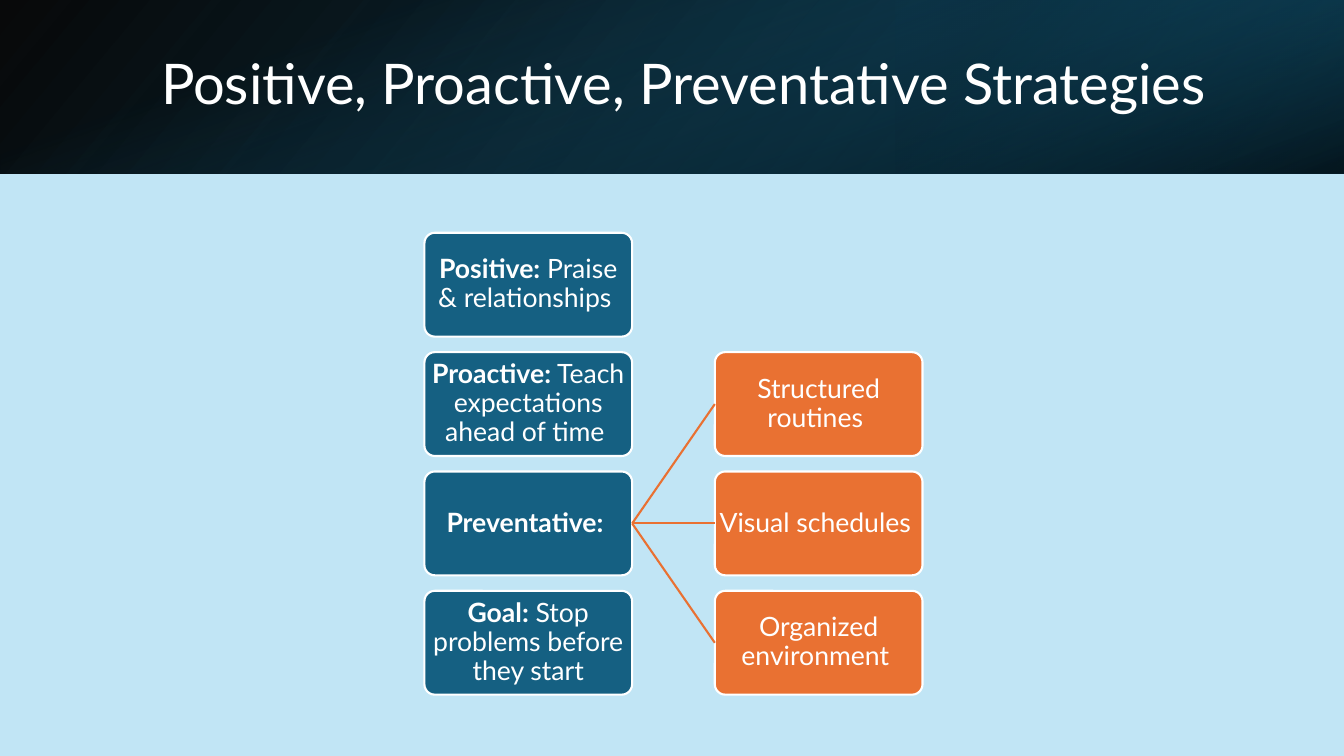
from lxml.etree import SubElement
from pptx import Presentation
from pptx.dml.color import RGBColor
from pptx.enum.shapes import MSO_CONNECTOR, MSO_SHAPE
from pptx.enum.text import MSO_ANCHOR, PP_ALIGN
from pptx.oxml import parse_xml
from pptx.oxml.ns import nsdecls, qn
from pptx.util import Inches, Pt

COLORS = {
    "sky": "C1E5F5", "white": "FFFFFF", "black": "000000", "blue": "156082",
    "deep": "104862", "night": "0B3041", "orange": "E97132",
}
WIDTH, HEIGHT = 13.33, 7.5
BAND = 1.72


class StrategySlide:
    grid_left, grid_top = 4.21, 2.31
    column_step, row_step = 2.88, 1.184
    box_width, box_height = 2.06, 1.03

    def __init__(self, deck):
        self.slide = deck.slides.add_slide(deck.slide_layouts[6])
        self.shapes = self.slide.shapes
        background = self.slide.background.fill
        background.solid()
        background.fore_color.rgb = self.color("sky")

    def color(self, name):
        return RGBColor.from_string(COLORS[name])

    def band(self, place, stops, angle, rotation=0, flip=False):
        layer = self.shapes.add_shape(MSO_SHAPE.RECTANGLE, *map(Inches, place))
        layer.shadow.inherit = False
        layer.line.fill.background()
        layer.rotation = rotation
        properties = layer.element.spPr
        if flip:
            properties.find(qn("a:xfrm")).set("flipH", "1")
        marks = "".join(
            f'<a:gs pos="{position * 1000}"><a:srgbClr val="{COLORS[name]}">'
            f'<a:alpha val="{alpha * 1000}"/></a:srgbClr></a:gs>'
            for position, name, alpha in stops
        )
        gradient = parse_xml(
            f'<a:gradFill {nsdecls("a")} rotWithShape="1"><a:gsLst>{marks}</a:gsLst>'
            f'<a:lin ang="{angle * 60000}" scaled="0"/></a:gradFill>'
        )
        properties.find(qn("a:prstGeom")).addnext(gradient)

    def set_text(self, frame, runs, size, align, inset):
        sides = ("margin_left", "margin_top", "margin_right", "margin_bottom")
        layout = {"word_wrap": True, "vertical_anchor": MSO_ANCHOR.MIDDLE}
        layout.update(zip(sides, map(Inches, inset)))
        for key, value in layout.items():
            setattr(frame, key, value)
        paragraph = frame.paragraphs[0]
        for key, value in {"alignment": align, "line_spacing": 0.9}.items():
            setattr(paragraph, key, value)
        for words, bold in runs:
            run = paragraph.add_run()
            run.text = words
            for key, value in {"name": "Lato", "size": Pt(size), "bold": bold}.items():
                setattr(run.font, key, value)
            run.font.color.rgb = self.color("white")

    def title(self, words):
        heading = self.shapes.add_textbox(*map(Inches, (1.5, 0.38, 10.98, 0.96)))
        self.set_text(heading.text_frame, [(words, False)], 40, PP_ALIGN.LEFT,
                      (0.1, 0.05, 0.1, 0.05))

    def box(self, column, row, runs, fill):
        left = self.grid_left + column * self.column_step
        top = self.grid_top + row * self.row_step
        card = self.shapes.add_shape(
            MSO_SHAPE.ROUNDED_RECTANGLE,
            *map(Inches, (left, top, self.box_width, self.box_height)))
        card.adjustments[0] = 0.1
        card.shadow.inherit = False
        card.fill.solid()
        card.fill.fore_color.rgb = self.color(fill)
        card.line.color.rgb = self.color("white")
        card.line.width = Pt(1.5)
        self.set_text(card.text_frame, runs, 19, PP_ALIGN.CENTER, (0.01,) * 4)
        return card

    def link(self, parent, child):
        branch = self.shapes.add_connector(MSO_CONNECTOR.STRAIGHT, 0, 0, 0, 0)
        branch.begin_connect(parent, 3)
        branch.end_connect(child, 1)
        branch.line.color.rgb = self.color("orange")
        branch.line.width = Pt(1.5)
        SubElement(branch.element.spPr, qn("a:effectLst"))


def main():
    deck = Presentation()
    deck.slide_width, deck.slide_height = Inches(WIDTH), Inches(HEIGHT)
    page = StrategySlide(deck)

    page.band((0, 0, WIDTH, BAND), [(0, "black", 96), (100, "deep", 100)], 140, flip=True)
    page.band((WIDTH * 2 / 3, 0, WIDTH / 3, BAND),
              [(19, "night", 68), (100, "blue", 79)], 320, rotation=180, flip=True)
    page.band(((WIDTH - BAND) / 2, (BAND - WIDTH) / 2, BAND, WIDTH),
              [(23, "blue", 0), (99, "black", 74)], 340, rotation=90)
    page.title("Positive, Proactive, Preventative Strategies")

    strategies = [
        [("Positive:", True), (" Praise & relationships ", False)],
        [("Proactive:", True), (" Teach expectations ahead of time ", False)],
        [("Preventative: ", True)],
        [("Goal:", True), (" Stop problems before they start", False)],
    ]
    cards = [page.box(0, row, runs, "blue") for row, runs in enumerate(strategies)]
    preventative = cards[2]

    supports = ["Structured routines ", "Visual schedules ", "Organized environment "]
    for row, support in enumerate(supports, start=1):
        page.link(preventative, page.box(1, row, [(support, False)], "orange"))

    deck.save("out.pptx")


if __name__ == "__main__":
    main()
